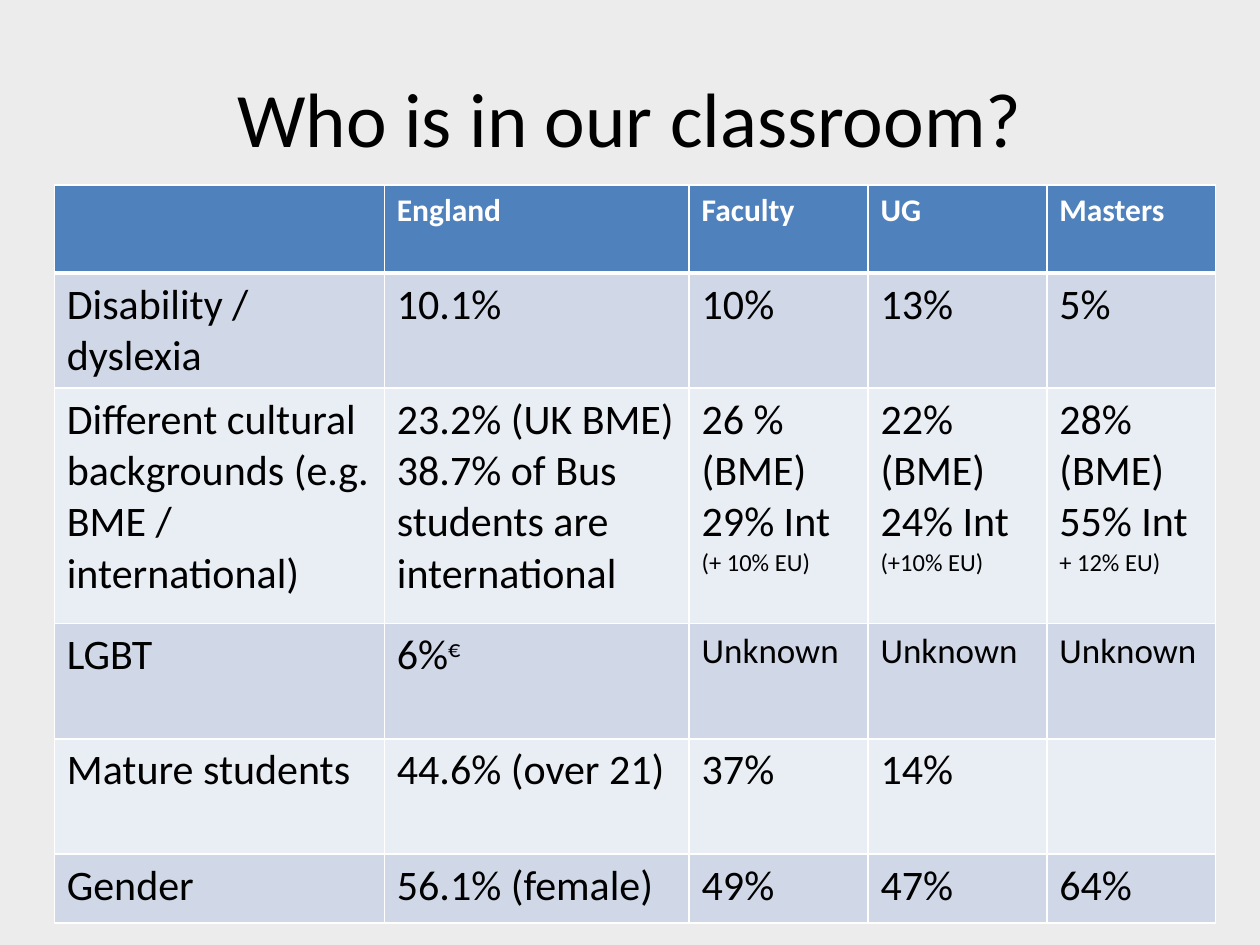
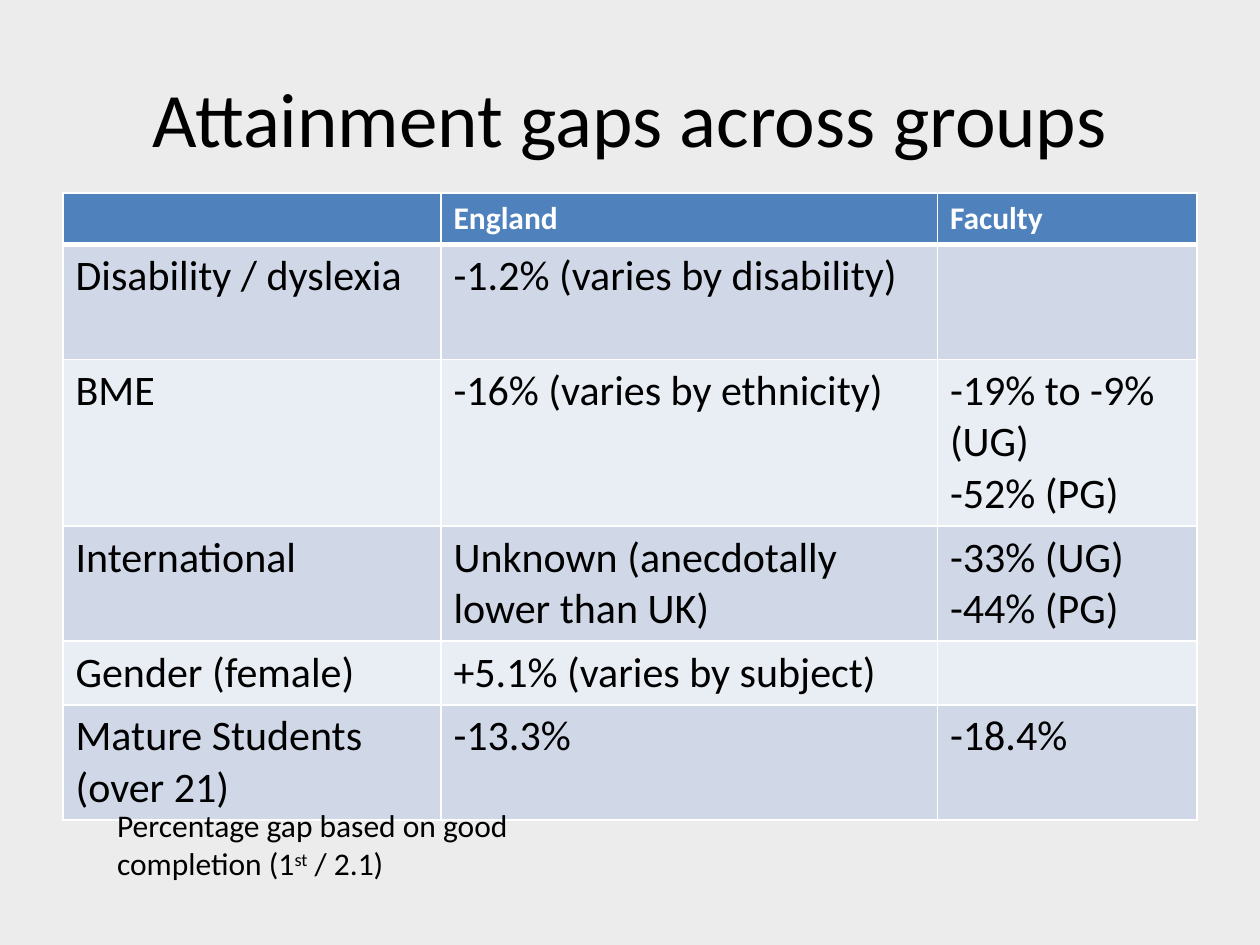
"""Builds two slides on student groups and attainment gaps."""
from typing import NamedTuple

from lxml import etree
from pptx import Presentation, util as u
from pptx.dml import color
from pptx.enum import text
from pptx.oxml import ns

COLORS = {
    "background": "ECECEC",
    "ink": "000000",
    "header": "4F81BD",
    "band_dark": "D0D8E8",
    "band_light": "E9EDF4",
    "white": "FFFFFF",
}
FONT = "Calibri"
TITLE_BOX = (36, 21.6, 648, 90)
SUPERSCRIPT = 30000


class Piece(NamedTuple):
    text: str
    size: float = 24
    baseline: int = 0


SMALL_UNKNOWN = [[Piece("Unknown", 20)]]


def international(home, overseas, european):
    return [[Piece(home)], [Piece(overseas + " "), Piece(european, 14)]]


CLASSROOM = {
    "origin": (31, 105.6),
    "widths": (188.6, 174.2, 102.2, 102.2, 96.5),
    "heights": (50.4, 65.8, 134.6, 65.8, 65.8, 39.6),
    "rows": [
        ["", "England", "Faculty", "UG", "Masters"],
        ["Disability / dyslexia", "10.1%", "10%", "13%", "5%"],
        [
            "Different cultural backgrounds (e.g. BME / international)",
            [[Piece("23.2% (UK BME)")], [Piece("38.7% of Bus students are international")]],
            international("26 % (BME)", "29% Int", "(+ 10% EU)"),
            international("22% (BME)", "24% Int", "(+10% EU)"),
            international("28% (BME)", "55% Int", "+ 12% EU)"),
        ],
        ["LGBT", [[Piece("6%"), Piece("€", 24, SUPERSCRIPT)]]] + [SMALL_UNKNOWN] * 3,
        ["Mature students", "44.6% (over 21)", "37%", "14%", ""],
        ["Gender", "56.1% (female)", "49%", "47%", "64%"],
    ],
}

ATTAINMENT = {
    "origin": (36, 110.4),
    "widths": (216, 283.7, 148.3),
    "heights": (29.2, 65.8, 95.1, 65.8, 36.5, 65.8),
    "rows": [
        ["", "England", "Faculty"],
        ["Disability / dyslexia", "-1.2% (varies by disability)", ""],
        ["BME", "-16% (varies by ethnicity)",
         [[Piece("-19% to -9% (UG)")], [Piece("-52% (PG)")]]],
        ["International", "Unknown (anecdotally lower than UK)",
         [[Piece("-33% (UG)")], [Piece("-44% (PG)")]]],
        ["Gender (female)", "+5.1% (varies by subject)", ""],
        ["Mature Students (over 21)", "-13.3%", "-18.4%"],
    ],
}

FOOTNOTE = [[
    Piece("Percentage gap based on good completion (1", 18),
    Piece("st", 18, SUPERSCRIPT),
    Piece(" / 2.1)", 18),
]]


def rgb(name):
    return color.RGBColor.from_string(COLORS[name])


def write(frame, paragraphs, ink="ink", bold=False, align=text.PP_ALIGN.LEFT):
    for index, pieces in enumerate(paragraphs):
        paragraph = frame.add_paragraph() if index else frame.paragraphs[0]
        paragraph.alignment = align
        for piece in pieces:
            run = paragraph.add_run()
            run.text = piece.text
            run.font.name = FONT
            run.font.size = u.Pt(piece.size)
            run.font.bold = bold
            run.font.color.rgb = rgb(ink)
            if piece.baseline:
                run._r.get_or_add_rPr().set("baseline", str(piece.baseline))


def add_text(slide, box, paragraphs, anchor=text.MSO_ANCHOR.TOP, align=text.PP_ALIGN.LEFT):
    frame = slide.shapes.add_textbox(*(u.Pt(length) for length in box)).text_frame
    frame.word_wrap = True
    frame.vertical_anchor = anchor
    write(frame, paragraphs, align=align)


def set_borders(cell, top, bottom):
    properties = cell._tc.get_or_add_tcPr()
    for position, (side, width) in enumerate(
        (("L", 1), ("R", 1), ("T", top), ("B", bottom))
    ):
        line = etree.Element(ns.qn("a:ln" + side), w=str(u.Pt(width)))
        fill = etree.SubElement(line, ns.qn("a:solidFill"))
        etree.SubElement(fill, ns.qn("a:srgbClr"), val=COLORS["white"])
        properties.insert(position, line)


def fill_cell(cell, content, row):
    header = row == 0
    band = "header" if header else "band_dark" if row % 2 else "band_light"
    cell.fill.solid()
    cell.fill.fore_color.rgb = rgb(band)
    set_borders(cell, top=3 if row == 1 else 1, bottom=3 if header else 1)
    if isinstance(content, str):
        content = [[Piece(content, 18 if header else 24)]] if content else []
    write(cell.text_frame, content, "white" if header else "ink", header)


def add_grid(slide, origin, widths, heights, rows):
    box = (*origin, sum(widths), sum(heights))
    table = slide.shapes.add_table(
        len(heights), len(widths), *(u.Pt(length) for length in box)
    ).table
    for column, width in zip(table.columns, widths):
        column.width = u.Pt(width)
    for row, (height, contents) in enumerate(zip(heights, rows)):
        table.rows[row].height = u.Pt(height)
        for column, content in enumerate(contents):
            fill_cell(table.cell(row, column), content, row)


def add_table_slide(presentation, title, grid):
    slide = presentation.slides.add_slide(presentation.slide_layouts[6])
    slide.background.fill.solid()
    slide.background.fill.fore_color.rgb = rgb("background")
    add_text(slide, TITLE_BOX, [[Piece(title, 44)]],
             text.MSO_ANCHOR.MIDDLE, text.PP_ALIGN.CENTER)
    add_grid(slide, **grid)
    return slide


def main():
    presentation = Presentation()
    presentation.slide_width, presentation.slide_height = u.Pt(720), u.Pt(540)
    add_table_slide(presentation, "Who is in our classroom?", CLASSROOM)
    slide = add_table_slide(presentation, "Attainment gaps across groups", ATTAINMENT)
    add_text(slide, (59.8, 457.2, 300, 51), FOOTNOTE)
    presentation.save("out.pptx")


if __name__ == "__main__":
    main()
